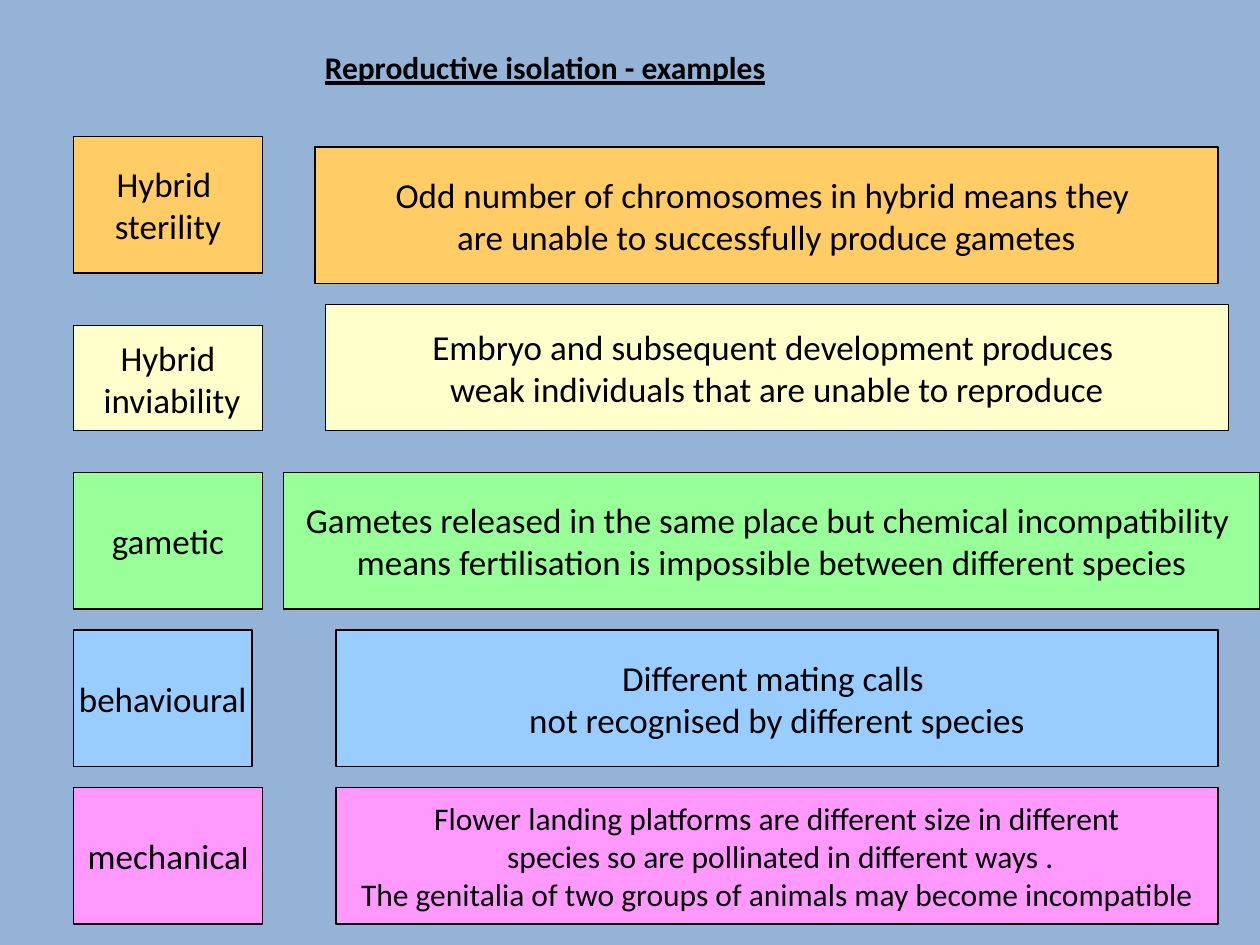
from dataclasses import dataclass

from pptx import Presentation
from pptx.dml.color import RGBColor
from pptx.enum import shapes, text
from pptx.util import Inches, Pt

COLUMNS, ROWS = 120, 90
SLIDE_WIDTH, SLIDE_HEIGHT = Inches(10), Inches(7.5)
FONT = "Calibri"

BACKGROUND = RGBColor(0x95, 0xB3, 0xD7)
BLACK = RGBColor(0x00, 0x00, 0x00)
ORANGE = RGBColor(0xFF, 0xCC, 0x66)
CREAM = RGBColor(0xFF, 0xFF, 0xCC)
GREEN = RGBColor(0x99, 0xFF, 0x99)
BLUE = RGBColor(0x99, 0xCC, 0xFF)
PINK = RGBColor(0xFF, 0x99, 0xFF)


@dataclass(frozen=True)
class Cells:
    column: float
    row: float
    columns: float
    rows: float

    def box(self) -> tuple[int, int, int, int]:
        return (
            round(SLIDE_WIDTH * self.column / COLUMNS),
            round(SLIDE_HEIGHT * self.row / ROWS),
            round(SLIDE_WIDTH * self.columns / COLUMNS),
            round(SLIDE_HEIGHT * self.rows / ROWS),
        )


@dataclass(frozen=True)
class Panel:
    cells: Cells
    lines: tuple[str, ...]
    size: int = 20
    small_ending: str = ""


@dataclass(frozen=True)
class Example:
    color: RGBColor
    barrier: Panel
    explanation: Panel


EXAMPLES = (
    Example(
        ORANGE,
        Panel(Cells(7, 13, 18, 13), ("Hybrid ", "sterility")),
        Panel(Cells(30, 14, 86, 13), (
            "Odd number of chromosomes in hybrid means they ",
            "are unable to successfully produce gametes",
        )),
    ),
    Example(
        CREAM,
        Panel(Cells(7, 31, 18, 10), ("Hybrid", " inviability")),
        Panel(Cells(31, 29, 86, 12), (
            "Embryo and subsequent development produces ",
            "weak individuals that are unable to reproduce",
        )),
    ),
    Example(
        GREEN,
        Panel(Cells(7, 45, 18, 13), ("gametic",)),
        Panel(Cells(27, 45, 93, 13), (
            "Gametes released in the same place but chemical incompatibility ",
            "means fertilisation is impossible between different species",
        )),
    ),
    Example(
        BLUE,
        Panel(Cells(7, 60, 17, 13), ("behavioural",)),
        Panel(Cells(32, 60, 84, 13), (
            "Different mating calls ",
            "not recognised by different species",
        )),
    ),
    Example(
        PINK,
        Panel(Cells(7, 75, 18, 13), ("mechanica",), small_ending="l"),
        Panel(Cells(32, 75, 84, 13), (
            "Flower landing platforms are different size in different",
            " species so are pollinated in different ways .",
            "The genitalia of two groups of animals may become incompatible",
        ), size=18),
    ),
)


def style(paragraph, size: int) -> None:
    paragraph.font.name = FONT
    paragraph.font.size = Pt(size)
    paragraph.font.color.rgb = BLACK


def draw_title(slide, cells: Cells, wording: str) -> None:
    frame = slide.shapes.add_textbox(*cells.box()).text_frame
    frame.word_wrap = True
    heading = frame.paragraphs[0]
    heading.text = wording
    style(heading, 18)
    heading.font.bold = True
    heading.font.underline = True


def draw_panel(slide, panel: Panel, color: RGBColor) -> None:
    rectangle = slide.shapes.add_shape(
        shapes.MSO_SHAPE.RECTANGLE, *panel.cells.box()
    )
    rectangle.shadow.inherit = False
    rectangle.fill.solid()
    rectangle.fill.fore_color.rgb = color
    rectangle.line.color.rgb = BLACK
    rectangle.line.width = Pt(0.75)
    frame = rectangle.text_frame
    frame.word_wrap = False
    frame.vertical_anchor = text.MSO_ANCHOR.MIDDLE
    frame.text = "\n".join(panel.lines)
    for paragraph in frame.paragraphs:
        paragraph.alignment = text.PP_ALIGN.CENTER
        style(paragraph, panel.size)
    if panel.small_ending:
        ending = frame.paragraphs[-1].add_run()
        ending.text = panel.small_ending
        ending.font.size = Pt(18)


def main() -> None:
    deck = Presentation()
    deck.slide_width, deck.slide_height = SLIDE_WIDTH, SLIDE_HEIGHT
    slide = deck.slides.add_slide(deck.slide_layouts[6])
    slide.background.fill.solid()
    slide.background.fill.fore_color.rgb = BACKGROUND
    draw_title(slide, Cells(29.75, 4, 64.2, 6), "Reproductive isolation - examples")
    for example in EXAMPLES:
        draw_panel(slide, example.barrier, example.color)
        draw_panel(slide, example.explanation, example.color)
    deck.save("out.pptx")


if __name__ == "__main__":
    main()
